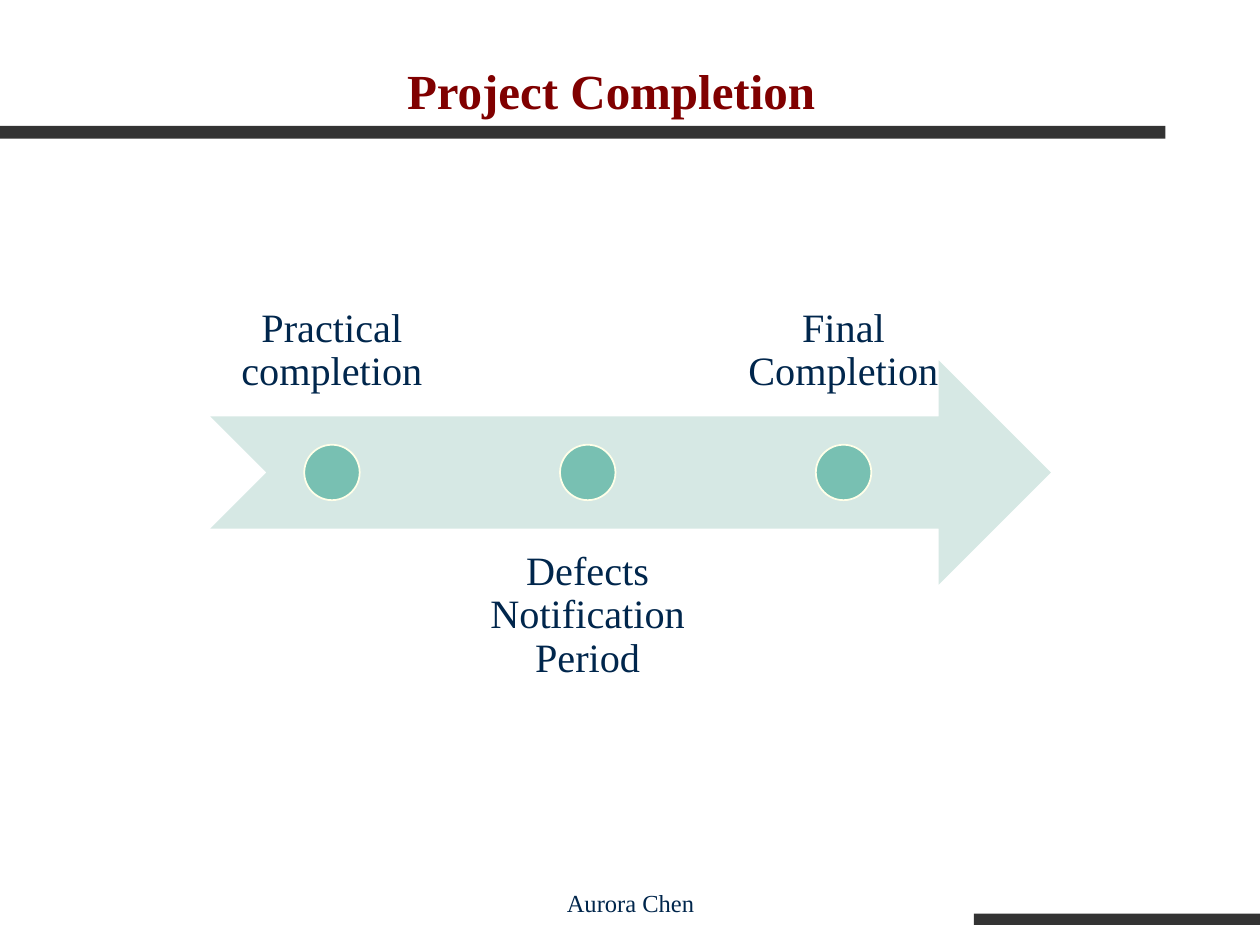
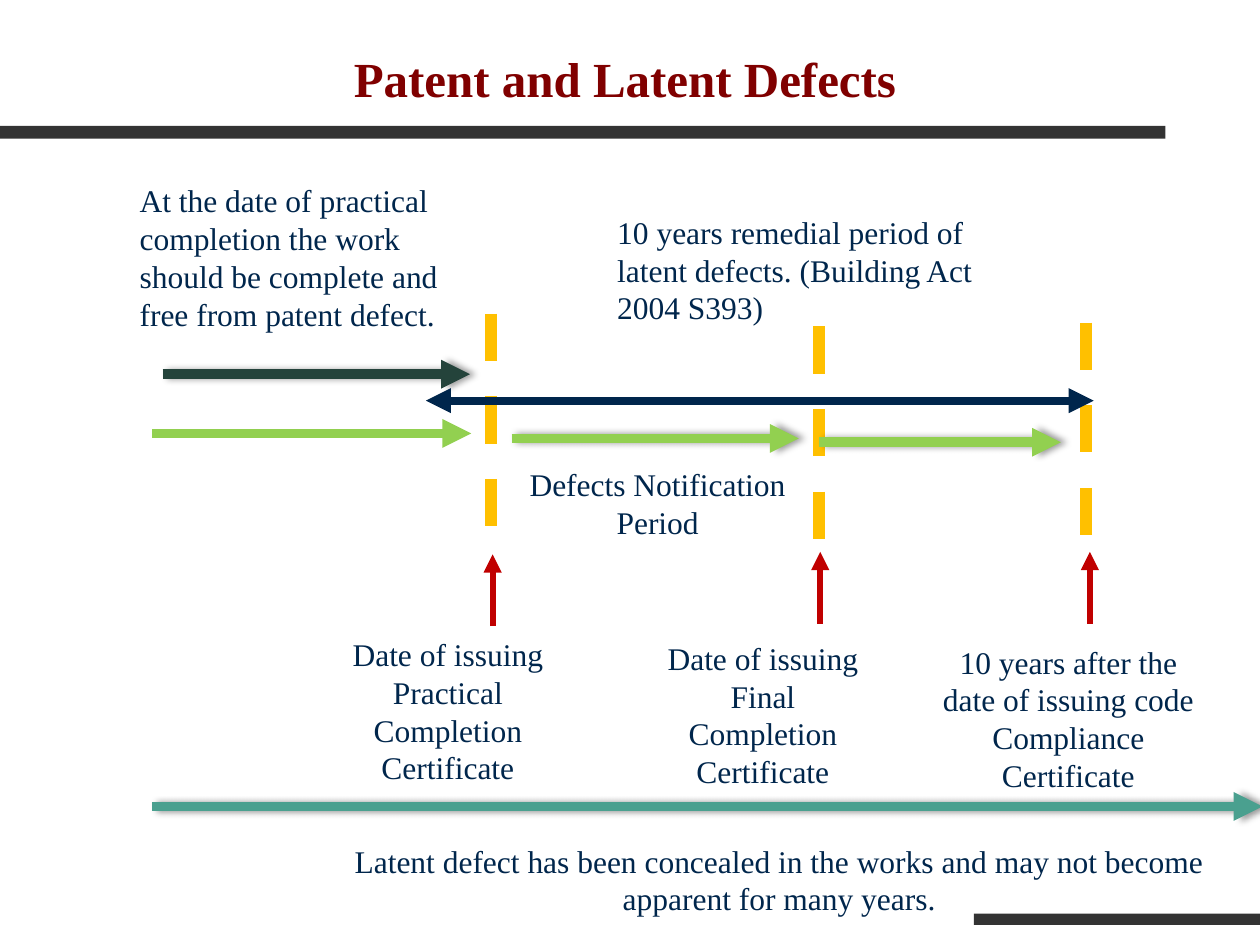
import pptx
import pptx.dml.color
import pptx.enum.dml
import pptx.enum.shapes
import pptx.enum.text
import pptx.oxml
import pptx.oxml.ns
import pptx.util
from pptx.util import Inches

SHAPE = pptx.enum.shapes.MSO_SHAPE
ALIGN = pptx.enum.text.PP_ALIGN
ANCHOR = pptx.enum.text.MSO_ANCHOR

FONT = "Times New Roman"
COLORS = {
    "title": "800000", "text": "00264C", "band": "333333",
    "timeline": "D6E8E4", "dot": "78C0B2", "dot_edge": "FFFFE9",
    "patent": "24433B", "notice": "92D050", "latent": "4AA08F",
    "gate": "FFC000", "pointer": "C00000", "remedy": "00264C",
}

# Content: boxes are (left, top, width, height) in inches
BANDS = [(0, 1, 9.25, 0.1), (7.73, 7.25, 2.27, 0.09)]
COMPLETION = {
    "title": ("Project Completion", (0, 0.31, 9.7, 0.69)),
    "milestones": ["Practical completion", "Defects Notification Period", "Final Completion"],
    "footer": ("Aurora Chen", (3.42, 6.83, 3.17, 0.5)),
}
DEFECTS = {
    "title": ("Patent and Latent Defects", (0.11, 0.21, 9.7, 0.69)),
    # gate x, gate top, pointer x, pointer tip, caption, caption box
    "gates": [
        (3.9, 2.49, 3.91, 4.4, "Date of issuing Practical Completion Certificate",
         (2.55, 4.99, 2.01, 1.31)),
        (6.5, 2.59, 6.51, 4.38, "Date of issuing Final Completion Certificate",
         (5.18, 5.02, 1.75, 1.31)),
        (8.62, 2.56, 8.65, 4.38, "10 years after the date of issuing code Compliance Certificate",
         (7.31, 5.05, 2.34, 1.31)),
    ],
    # start x, end x, y, colour, width, two-headed, shadow
    "periods": [
        (1.29, 3.73, 2.97, "patent", 5.5, False, True),
        (1.21, 3.74, 3.44, "notice", 5.5, False, False),
        (4.06, 6.34, 3.48, "notice", 5.5, False, True),
        (6.5, 8.42, 3.51, "notice", 5.5, False, True),
        (1.21, 10.02, 6.4, "latent", 5.5, False, True),
        (3.38, 8.68, 3.18, "remedy", 4.75, True, False),
    ],
    "notes": [
        ("At the date of practical completion the work should be complete and "
         "free from patent defect.", (1.01, 1.39, 2.73, 1.31), ALIGN.LEFT),
        ("Defects Notification Period", (4.07, 3.64, 2.3, 0.71), ALIGN.CENTER),
        ("10 years remedial period of latent defects. (Building Act 2004 S393)",
         (4.8, 1.64, 3.05, 1.31), ALIGN.LEFT),
        ("Latent defect has been concealed in the works and may not become "
         "apparent for many years.", (2.35, 6.63, 7.67, 0.71), ALIGN.CENTER),
    ],
}


def rgb(name):
    return pptx.dml.color.RGBColor.from_string(COLORS[name])


def inches(box):
    return [Inches(value) for value in box]


def write(frame, text, size, color="text", align=ALIGN.CENTER, bold=False):
    frame.word_wrap = True
    frame.text = text
    paragraph = frame.paragraphs[0]
    paragraph.alignment = align
    font = paragraph.font
    font.name, font.size, font.bold = FONT, pptx.util.Pt(size), bold
    font.color.rgb = rgb(color)
    return paragraph


def add_text(slide, text, box, size=18, align=ALIGN.CENTER, anchor=ANCHOR.TOP):
    frame = slide.shapes.add_textbox(*inches(box)).text_frame
    write(frame, text, size, align=align)
    frame.vertical_anchor = anchor
    return frame


def add_filled(slide, preset, box, fill, edge=None):
    shape = slide.shapes.add_shape(preset, *inches(box))
    shape.shadow.inherit = False
    shape.fill.solid()
    shape.fill.fore_color.rgb = rgb(fill)
    if edge:
        shape.line.color.rgb = rgb(edge)
        shape.line.width = pptx.util.Pt(1)
    else:
        shape.line.fill.background()
    return shape


def add_line(slide, start, end, color, width, heads=(), shadow=False, dashed=False):
    line = slide.shapes.add_connector(
        pptx.enum.shapes.MSO_CONNECTOR.STRAIGHT, *inches(start + end))
    line.line.color.rgb = rgb(color)
    line.line.width = pptx.util.Pt(width)
    if dashed:
        line.line.dash_style = pptx.enum.dml.MSO_LINE.DASH
    properties = line.element.spPr
    outline = properties.find(pptx.oxml.ns.qn("a:ln"))
    namespace = pptx.oxml.ns.nsdecls("a")
    for head in heads:
        outline.append(pptx.oxml.parse_xml(f'<a:{head} {namespace} type="triangle"/>'))
    effect = (
        '<a:outerShdw blurRad="50800" dist="38100" dir="0" rotWithShape="0">'
        '<a:srgbClr val="000000"><a:alpha val="40000"/></a:srgbClr></a:outerShdw>'
    ) if shadow else ""
    properties.append(pptx.oxml.parse_xml(f"<a:effectLst {namespace}>{effect}</a:effectLst>"))


def add_slide(prs, content):
    slide = prs.slides.add_slide(prs.slide_layouts[5])
    text, box = content["title"]
    title = slide.shapes.title
    title.left, title.top, title.width, title.height = inches(box)
    write(title.text_frame, text, 28, "title", bold=True)
    title.text_frame.vertical_anchor = ANCHOR.BOTTOM
    return slide


def move_bands_to_master(prs, slide):
    """Draw the bands once and hand them to the master, so every slide shows them."""
    for number, box in enumerate(BANDS):
        band = add_filled(slide, SHAPE.RECTANGLE, box, "band").element
        band.nvSpPr.cNvPr.set("id", str(100 + number))
        prs.slide_master.shapes.element.append(band)


def build_completion(slide):
    # Timeline arrow
    left, top, width, height = 1.67, 2.86, 6.67, 1.78
    add_filled(slide, SHAPE.NOTCHED_RIGHT_ARROW, (left, top, width, height), "timeline")

    # Milestones, labelled above and below in turn
    step, label_width, dot = 2.03, 1.93, 0.44
    for number, label in enumerate(COMPLETION["milestones"]):
        x = left + number * step
        above = number % 2 == 0
        label_top = 1.53 if above else 4.19
        frame = add_text(slide, label, (x, label_top, label_width, height), 23,
                         anchor=ANCHOR.BOTTOM if above else ANCHOR.TOP)
        frame.margin_left = frame.margin_right = Inches(0.18)
        frame.margin_top = frame.margin_bottom = Inches(0.18)
        frame.paragraphs[0].line_spacing = 0.9
        dot_box = (x + (label_width - dot) / 2, top + (height - dot) / 2, dot, dot)
        add_filled(slide, SHAPE.OVAL, dot_box, "dot", "dot_edge")

    # Footer
    add_text(slide, *COMPLETION["footer"], size=14, anchor=ANCHOR.BOTTOM)


def build_defects(slide):
    # Dated gates with pointers and captions
    for x, top, pointer_x, tip, caption, box in DEFECTS["gates"]:
        add_line(slide, (x, top), (x, top + 1.9), "gate", 6.75, dashed=True)
        add_line(slide, (pointer_x, tip + 0.57), (pointer_x, tip), "pointer", 3.5, ["tailEnd"])
        add_text(slide, caption, box)

    # Period arrows
    for start, end, y, color, width, two_headed, shadow in DEFECTS["periods"]:
        heads = ["headEnd", "tailEnd"] if two_headed else ["tailEnd"]
        add_line(slide, (start, y), (end, y), color, width, heads, shadow)

    # Explanations
    for text, box, align in DEFECTS["notes"]:
        add_text(slide, text, box, align=align)


def main():
    prs = pptx.Presentation()
    prs.slide_width, prs.slide_height = Inches(10), Inches(7.5)
    completion = add_slide(prs, COMPLETION)
    move_bands_to_master(prs, completion)
    build_completion(completion)
    build_defects(add_slide(prs, DEFECTS))
    prs.save("out.pptx")


if __name__ == "__main__":
    main()
